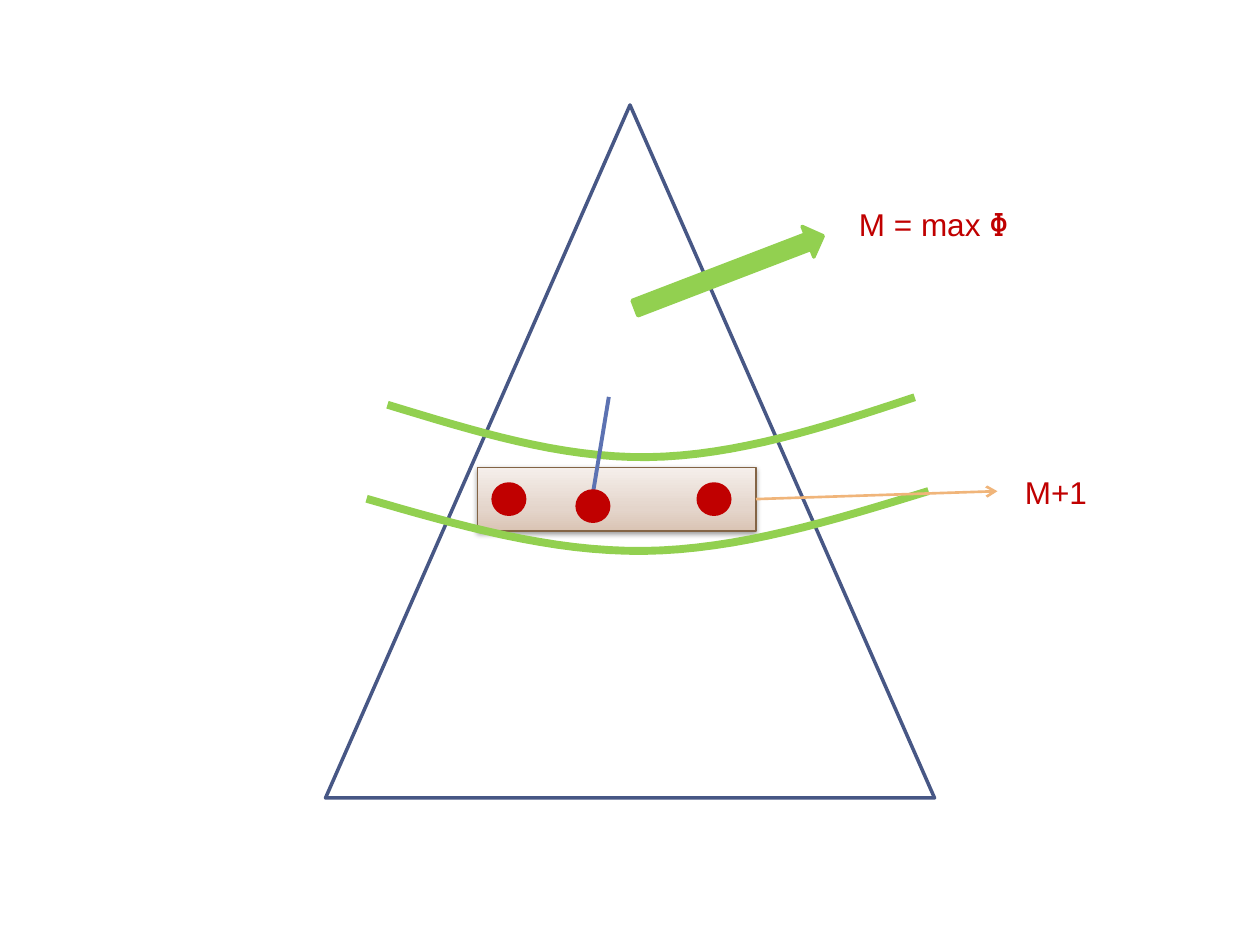
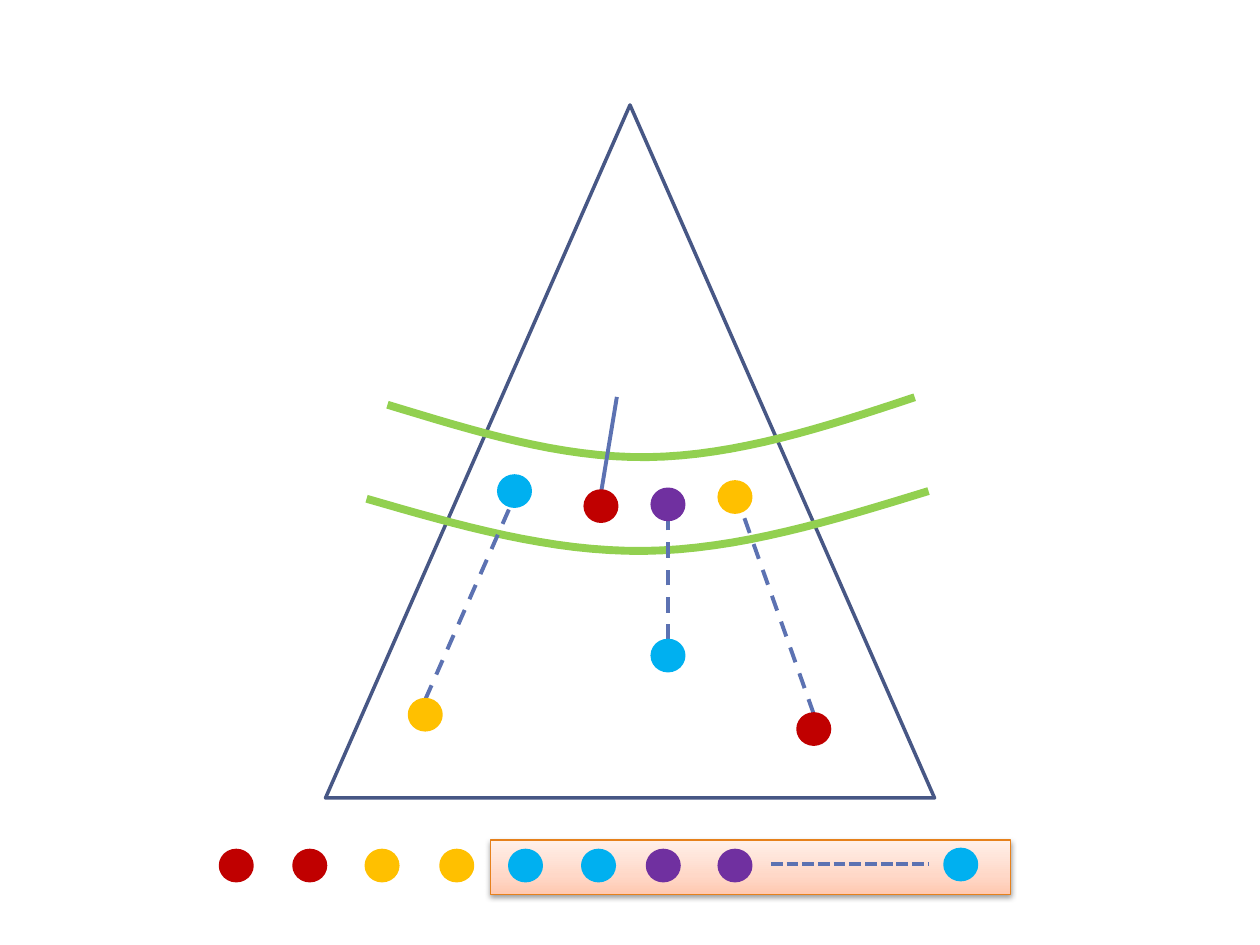
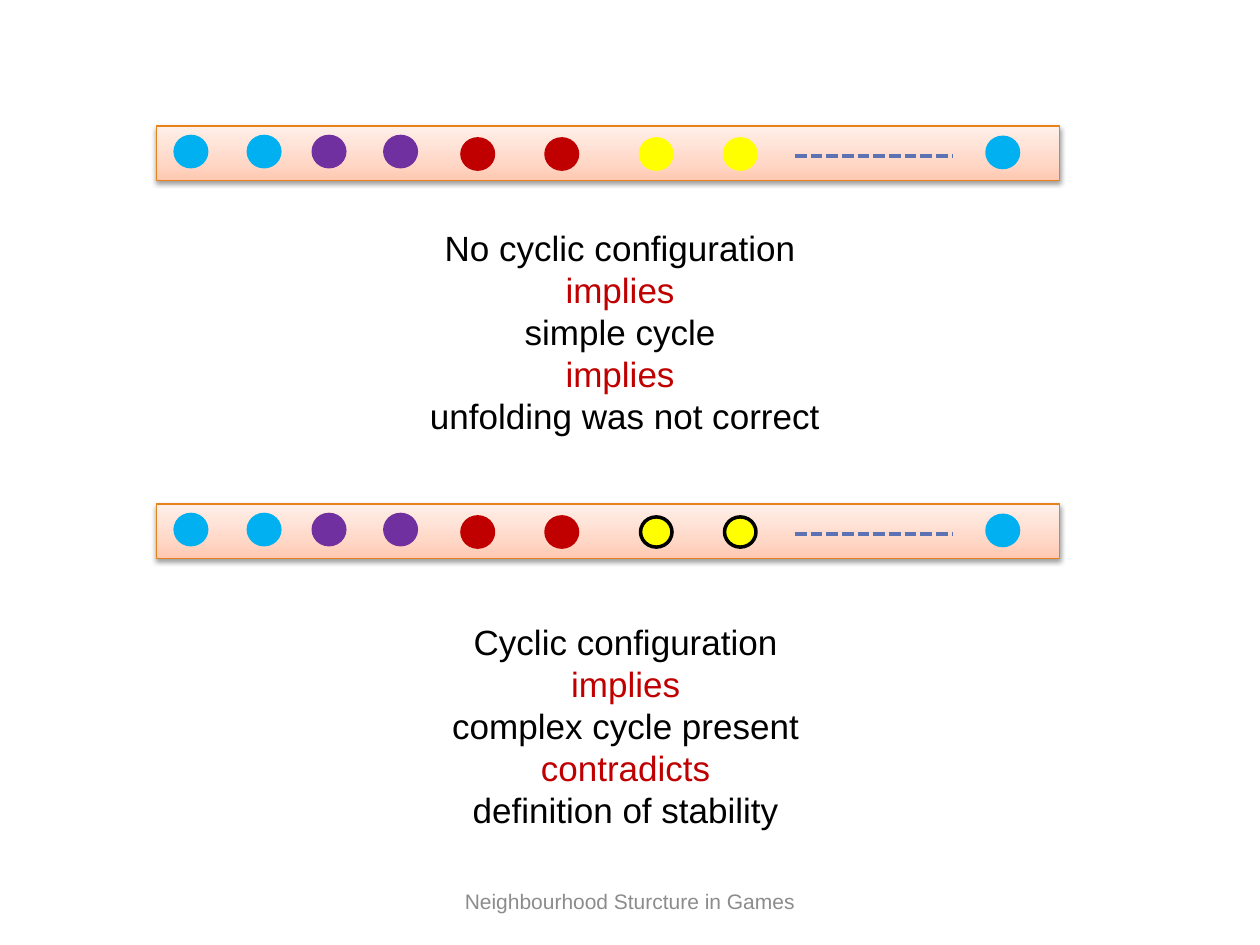
from dataclasses import dataclass
from typing import NamedTuple, Optional

from lxml.etree import SubElement
from pptx import Presentation
from pptx.dml.color import RGBColor
from pptx.enum.dml import MSO_LINE
from pptx.enum.shapes import MSO_CONNECTOR, MSO_SHAPE
from pptx.enum.text import MSO_ANCHOR, PP_ALIGN
from pptx.oxml.ns import qn
from pptx.shapes.autoshape import Shape
from pptx.shapes.connector import Connector
from pptx.slide import Slide
from pptx.util import Pt


@dataclass(frozen=True)
class Theme:
    red: RGBColor = RGBColor(0xC0, 0x00, 0x00)
    amber: RGBColor = RGBColor(0xFF, 0xC0, 0x00)
    yellow: RGBColor = RGBColor(0xFF, 0xFF, 0x00)
    blue: RGBColor = RGBColor(0x00, 0xB0, 0xF0)
    purple: RGBColor = RGBColor(0x70, 0x30, 0xA0)
    green: RGBColor = RGBColor(0x92, 0xD0, 0x50)
    black: RGBColor = RGBColor(0x00, 0x00, 0x00)
    grey: RGBColor = RGBColor(0x8C, 0x8C, 0x8C)
    tree: RGBColor = RGBColor(0x47, 0x57, 0x85)
    edge: RGBColor = RGBColor(0x5C, 0x72, 0xB2)
    pointer: RGBColor = RGBColor(0xF0, 0xB5, 0x7A)
    font: str = "Arial"
    symbol_font: str = "DejaVu Sans Mono"
    label_size: int = 18
    statement_size: int = 20
    footer_size: int = 12


THEME = Theme()


class Point(NamedTuple):
    x: float
    y: float


class Box(NamedTuple):
    left: float
    top: float
    width: float
    height: float

    def lengths(self) -> list[Pt]:
        return [Pt(value) for value in self]


class Dot(NamedTuple):
    x: float
    y: float
    color: RGBColor
    outline: Optional[RGBColor] = None


class Edge(NamedTuple):
    start: Point
    end: Point
    dash: Optional[MSO_LINE] = None
    color: RGBColor = THEME.edge
    weight: float = 2.25


class BarStyle(NamedTuple):
    """Gradient colours run from the bottom of the bar to its top."""
    bottom: str
    middle: str
    top: str
    outline: RGBColor


class Line(NamedTuple):
    text: str
    color: RGBColor


ORANGE_BAR = BarStyle("FFC9B1", "FFD8C8", "FFF0EA", RGBColor(0xE6, 0x81, 0x1C))
BROWN_BAR = BarStyle("DAC4B4", "E4D5CB", "F5EFEB", RGBColor(0x83, 0x64, 0x45))

TRIANGLE = Box(186, 60, 348, 396)
DOT_WIDTH, DOT_HEIGHT = 18, 17.25
CURVE_STEPS = 16
# Each level curve is two cubic segments that share their middle point.
LEVEL_CURVES = (
    [Point(209.5, 285), Point(262, 300.2), Point(314.6, 315.4), Point(367.9, 314.8),
     Point(421.9, 314.2), Point(475.9, 297.4), Point(530.6, 280.6)],
    [Point(221.4, 231.3), Point(270.7, 246.2), Point(319.7, 261.8), Point(370, 261.2),
     Point(420.5, 260.6), Point(471.6, 244), Point(522.7, 227)],
)


def add_outlined(slide: Slide, kind: MSO_SHAPE, box: Box, outline: RGBColor,
                 weight: float = 2, fill: Optional[RGBColor] = None) -> Shape:
    shape = slide.shapes.add_shape(kind, *box.lengths())
    shape.shadow.inherit = False
    if fill is None:
        shape.fill.background()
    else:
        shape.fill.solid()
        shape.fill.fore_color.rgb = fill
    shape.line.color.rgb = outline
    shape.line.width = Pt(weight)
    return shape


def add_dots(slide: Slide, dots: list[Dot]) -> None:
    for dot in dots:
        box = Box(dot.x - DOT_WIDTH / 2, dot.y - DOT_HEIGHT / 2, DOT_WIDTH, DOT_HEIGHT)
        outline = dot.color if dot.outline is None else dot.outline
        add_outlined(slide, MSO_SHAPE.OVAL, box, outline, fill=dot.color)


def add_edge(slide: Slide, edge: Edge) -> Connector:
    connector = slide.shapes.add_connector(
        MSO_CONNECTOR.STRAIGHT, *(Pt(value) for value in (*edge.start, *edge.end)))
    connector.line.color.rgb = edge.color
    connector.line.width = Pt(edge.weight)
    if edge.dash is not None:
        connector.line.dash_style = edge.dash
    SubElement(connector._element.spPr, qn("a:effectLst"))
    return connector


def add_pointer(slide: Slide, edge: Edge) -> None:
    """Draw an edge with an open arrowhead at its end."""
    connector = add_edge(slide, edge)
    outline = connector._element.spPr.find(qn("a:ln"))
    SubElement(outline, qn("a:tailEnd"), type="arrow")


def add_bar(slide: Slide, box: Box, style: BarStyle) -> None:
    """Draw a gradient bar with a soft shadow below it."""
    bar = add_outlined(slide, MSO_SHAPE.RECTANGLE, box, style.outline, 0.75)
    bar.fill.gradient()
    bar.fill.gradient_angle = 90
    properties = bar._element.spPr
    stops = properties.find(qn("a:gradFill")).find(qn("a:gsLst"))
    for stop in list(stops):
        stops.remove(stop)
    for percent, color in ((0, style.bottom), (35, style.middle), (100, style.top)):
        stop = SubElement(stops, qn("a:gs"), pos=str(percent * 1000))
        SubElement(stop, qn("a:srgbClr"), val=color)
    shadow = SubElement(properties.find(qn("a:effectLst")), qn("a:outerShdw"),
                        blurRad=str(Pt(3.1)), dist=str(Pt(1.6)), dir="5400000",
                        rotWithShape="0")
    shade = SubElement(shadow, qn("a:srgbClr"), val="000000")
    SubElement(shade, qn("a:alpha"), val="38000")


def cubic_point(controls: list[Point], t: float) -> Point:
    weights = ((1 - t) ** 3, 3 * t * (1 - t) ** 2, 3 * t ** 2 * (1 - t), t ** 3)
    return Point(sum(w * point.x for w, point in zip(weights, controls)),
                 sum(w * point.y for w, point in zip(weights, controls)))


def add_curve(slide: Slide, controls: list[Point]) -> None:
    vertices = [cubic_point(controls[first:first + 4], step / CURVE_STEPS)
                for first in range(0, len(controls) - 1, 3)
                for step in range(1, CURVE_STEPS + 1)]
    builder = slide.shapes.build_freeform(Pt(controls[0].x), Pt(controls[0].y))
    builder.add_line_segments([(Pt(x), Pt(y)) for x, y in vertices], close=False)
    curve = builder.convert_to_shape()
    curve.shadow.inherit = False
    curve.fill.background()
    curve.line.color.rgb = THEME.green
    curve.line.width = Pt(4.5)


def add_tree(slide: Slide) -> None:
    """Draw the triangle and the two level curves across it."""
    add_outlined(slide, MSO_SHAPE.ISOSCELES_TRIANGLE, TRIANGLE, THEME.tree)
    for controls in LEVEL_CURVES:
        add_curve(slide, controls)


def add_text(slide: Slide, box: Box, lines: list[Line], size: int,
             align: PP_ALIGN = PP_ALIGN.CENTER, wrap: bool = False) -> Shape:
    text_box = slide.shapes.add_textbox(*box.lengths())
    frame = text_box.text_frame
    frame.word_wrap = wrap
    for index, line in enumerate(lines):
        para = frame.add_paragraph() if index else frame.paragraphs[0]
        para.text = line.text
        para.alignment = align
        para.font.name = THEME.font
        para.font.size = Pt(size)
        para.font.color.rgb = line.color
    return text_box


def add_sequence(slide: Slide, top: float, accent_outline: RGBColor) -> None:
    """Draw the long bar of paired dots; the yellow pair takes the given outline."""
    add_bar(slide, Box(89.3, top, 516.2, 31), ORANGE_BAR)
    add_edge(slide, Edge(Point(454.3, top + 17.3), Point(544.3, top + 17.3),
                         MSO_LINE.SQUARE_DOT))
    upper, lower = top + 14.6, top + 16
    add_dots(slide, [
        Dot(109.1, upper, THEME.blue), Dot(150.9, upper, THEME.blue),
        Dot(188, upper, THEME.purple), Dot(228.9, upper, THEME.purple),
        Dot(273, lower, THEME.red), Dot(321, lower, THEME.red),
        Dot(375, lower, THEME.yellow, accent_outline),
        Dot(423, lower, THEME.yellow, accent_outline),
        Dot(573, top + 15.1, THEME.blue),
    ])


def build_maximum_slide(slide: Slide) -> None:
    add_bar(slide, Box(272.8, 267, 159.2, 36.5), BROWN_BAR)
    add_tree(slide)
    arrow = add_outlined(slide, MSO_SHAPE.RIGHT_ARROW, Box(359.1, 146.1, 115.2, 18.7),
                         THEME.green, fill=THEME.green)
    arrow.rotation = 339
    maximum = add_text(slide, Box(483.8, 113.8, 100.8, 28.8),
                       [Line("M = max ", THEME.red)], THEME.label_size, PP_ALIGN.LEFT)
    symbol = maximum.text_frame.paragraphs[0].add_run()
    symbol.text = "Φ"
    symbol.font.name = THEME.symbol_font
    add_edge(slide, Edge(Point(339, 280.8), Point(347.9, 226.8)))
    add_dots(slide, [Dot(338.8, 289.2, THEME.red), Dot(408, 285.2, THEME.red),
                     Dot(290.8, 285.2, THEME.red)])
    add_pointer(slide, Edge(Point(432, 285.2), Point(570, 280.7),
                            color=THEME.pointer, weight=1.5))
    add_text(slide, Box(578.6, 267, 50.4, 28.8), [Line("M+1", THEME.red)],
             THEME.label_size, PP_ALIGN.LEFT)


def build_unfolding_slide(slide: Slide) -> None:
    add_bar(slide, Box(280.4, 480, 297, 31), ORANGE_BAR)
    add_tree(slide)
    for edge in (
        Edge(Point(343.6, 280.8), Point(352.5, 226.8)),
        Edge(Point(465, 408), Point(420, 280.8), MSO_LINE.DASH),
        Edge(Point(243, 399.8), Point(293.8, 284.4), MSO_LINE.DASH),
        Edge(Point(381.7, 365.8), Point(381.7, 292.4), MSO_LINE.DASH),
        Edge(Point(440.6, 493.7), Point(530.6, 493.7), MSO_LINE.SQUARE_DOT),
    ):
        add_edge(slide, edge)
    add_dots(slide, [
        Dot(294, 280.6, THEME.blue), Dot(343.4, 289.2, THEME.red),
        Dot(381.7, 288.2, THEME.purple), Dot(420, 284, THEME.amber),
        Dot(243, 408.4, THEME.amber), Dot(381.7, 374.6, THEME.blue),
        Dot(465, 416.6, THEME.red),
    ])
    row = ((135, THEME.red), (177, THEME.red), (218.3, THEME.amber), (261, THEME.amber),
           (300.3, THEME.blue), (342, THEME.blue), (379, THEME.purple), (420, THEME.purple))
    add_dots(slide, [Dot(x, 494.6, color) for x, color in row])
    add_dots(slide, [Dot(549, 494, THEME.blue)])


def build_cycles_slide(slide: Slide) -> None:
    add_sequence(slide, 72, THEME.yellow)
    add_text(slide, Box(237.6, 126, 239, 128.2), [
        Line("No cyclic configuration ", THEME.black),
        Line("implies ", THEME.red),
        Line("simple cycle ", THEME.black),
        Line("implies ", THEME.red),
        Line("unfolding was not correct", THEME.black),
    ], THEME.statement_size)
    add_sequence(slide, 288, THEME.black)
    add_text(slide, Box(250.2, 351.2, 214.6, 128.2), [
        Line("Cyclic configuration", THEME.black),
        Line("implies", THEME.red),
        Line("complex cycle present", THEME.black),
        Line("contradicts", THEME.red),
        Line("definition of stability", THEME.black),
    ], THEME.statement_size)
    footer = add_text(slide, Box(246, 500.6, 228, 28.8),
                      [Line("Neighbourhood Sturcture in Games", THEME.grey)],
                      THEME.footer_size, wrap=True)
    footer.text_frame.vertical_anchor = MSO_ANCHOR.MIDDLE


def main() -> None:
    deck = Presentation()
    deck.slide_width, deck.slide_height = Pt(720), Pt(540)
    blank = deck.slide_layouts[6]
    for build in (build_maximum_slide, build_unfolding_slide, build_cycles_slide):
        build(deck.slides.add_slide(blank))
    deck.save("out.pptx")


if __name__ == "__main__":
    main()
